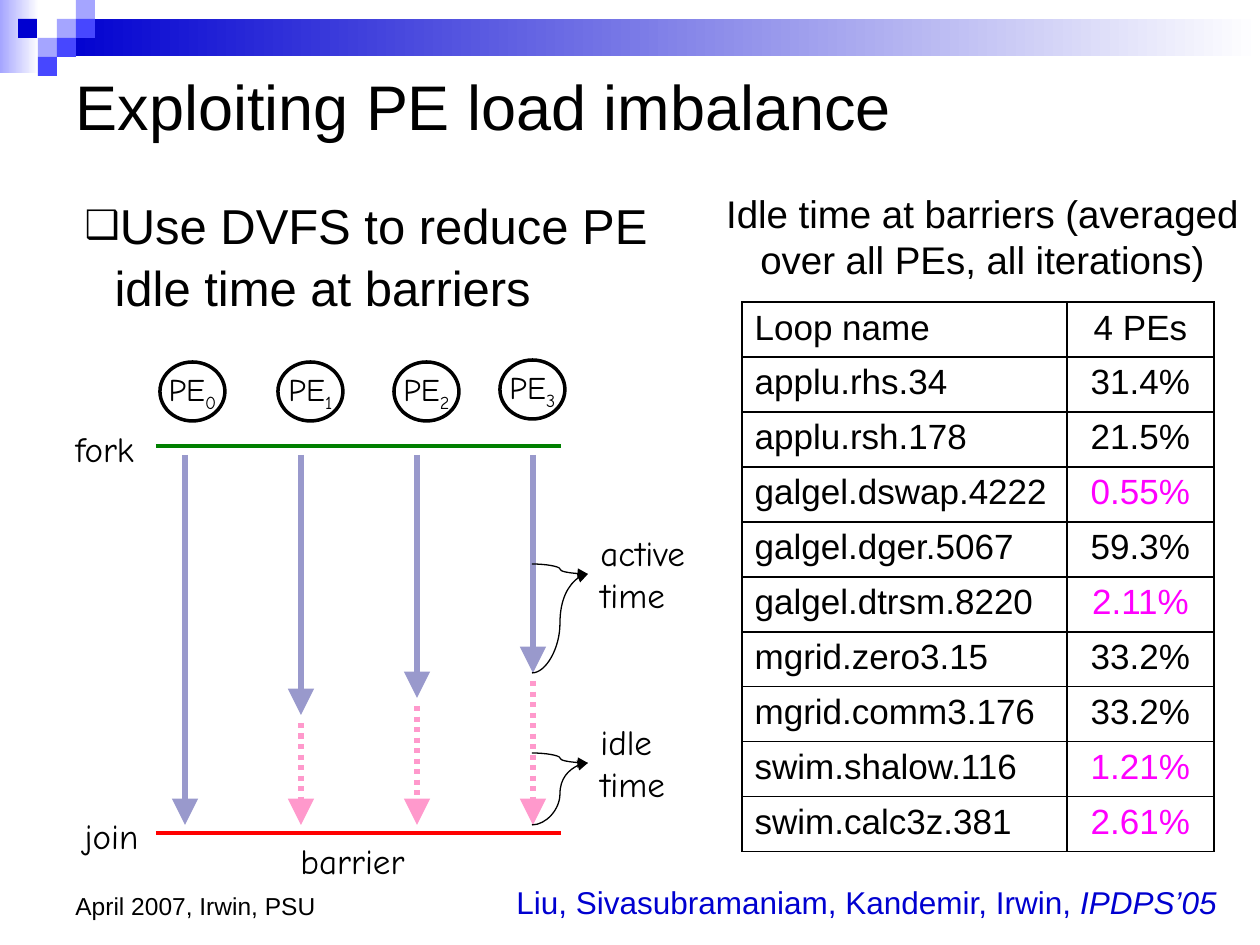
from lxml.etree import SubElement
from pptx import Presentation
from pptx.dml.color import RGBColor
from pptx.enum.dml import MSO_LINE as DASH
from pptx.enum.shapes import MSO_CONNECTOR as LINK, MSO_SHAPE as SHAPE
from pptx.enum.text import MSO_ANCHOR as ANCHOR, MSO_AUTO_SIZE as AUTOSIZE, PP_ALIGN as ALIGN
from pptx.oxml.ns import qn
from pptx.util import Emu, Pt

PX_PER_INCH = 126
BLACK, BLUE, MID_BLUE, PALE_BLUE = "000000", "0000D0", "4747FF", "A5A5FF"
GREEN, RED, MAGENTA, WHITE = "008000", "FF0000", "FF00FF", "FFFFFF"
ACTIVE, IDLE = "9999CC", "FF99CC"
SANS, HAND = "Arial", "Comic Neue"

LOOPS = [
    ("Loop name", "4 PEs"),
    ("applu.rhs.34", "31.4%"),
    ("applu.rsh.178", "21.5%"),
    ("galgel.dswap.4222", "0.55%"),
    ("galgel.dger.5067", "59.3%"),
    ("galgel.dtrsm.8220", "2.11%"),
    ("mgrid.zero3.15", "33.2%"),
    ("mgrid.comm3.176", "33.2%"),
    ("swim.shalow.116", "1.21%"),
    ("swim.calc3z.381", "2.61%"),
]
BALANCED = {"0.55%", "2.11%", "1.21%", "2.61%"}


def px(length):
    return Emu(round(length * 914400 / PX_PER_INCH))


def rgb(color):
    return RGBColor.from_string(color)


def write(frame, text, size=20, font=SANS, color=BLACK, align=ALIGN.LEFT,
          anchor=None, wrap=True, ending="", subscript=False):
    """Fill a frame, one paragraph a line; the ending is italic or subscript."""
    frame.word_wrap = wrap
    if anchor is not None:
        frame.vertical_anchor = anchor
    for index, line in enumerate(text.split("\n")):
        paragraph = frame.add_paragraph() if index else frame.paragraphs[0]
        paragraph.alignment = align
        for part in filter(None, (line, ending)):
            run = paragraph.add_run()
            run.text = part
            run.font.size, run.font.name = Pt(size), font
            run.font.color.rgb = rgb(color)
            if part == ending and subscript:
                run.font._element.set("baseline", "-25000")
            elif part == ending:
                run.font.italic = True


class Board:
    def __init__(self, slide):
        self.slide = slide
        self.shapes = slide.shapes

    def placeholder(self, index, box, text, **style):
        holder = self.slide.placeholders[index]
        holder.left, holder.top, holder.width, holder.height = map(px, box)
        frame = holder.text_frame
        frame.auto_size = AUTOSIZE.NONE
        write(frame, text, **style)
        return frame

    def label(self, box, text, **style):
        write(self.shapes.add_textbox(*map(px, box)).text_frame, text, **style)

    def block(self, box, color, fade=False):
        """Draw a borderless rectangle, fading to white on the right if asked."""
        block = self.shapes.add_shape(SHAPE.RECTANGLE, *map(px, box))
        block.shadow.inherit = False
        block.line.fill.background()
        if fade:
            block.fill.gradient()
            block.fill.gradient_angle = 0
            for stop, shade in zip(block.fill.gradient_stops, (color, WHITE)):
                stop.color.rgb = rgb(shade)
        else:
            block.fill.solid()
            block.fill.fore_color.rgb = rgb(color)

    def processor(self, box, number):
        circle = self.shapes.add_shape(SHAPE.OVAL, *map(px, box))
        circle.shadow.inherit = False
        circle.fill.background()
        circle.line.color.rgb = rgb(BLACK)
        circle.line.width = Pt(2)
        write(circle.text_frame, "PE", size=18, font=HAND, align=ALIGN.CENTER,
              anchor=ANCHOR.MIDDLE, wrap=False, ending=str(number), subscript=True)

    def link(self, start, end, color, width, kind=LINK.STRAIGHT, dash=None, head=None):
        """Draw a line; head is the arrowhead size at its end."""
        link = self.shapes.add_connector(kind, *map(px, (*start, *end)))
        link.line.color.rgb = rgb(color)
        link.line.width = Pt(width)
        if dash:
            link.line.dash_style = dash
        if head:
            SubElement(link.line._get_or_add_ln(), qn("a:tailEnd"),
                       type="triangle", w=head, len=head)
        SubElement(link._element.spPr, qn("a:effectLst"))

    def table(self, left, top, widths, row_height, rows):
        frame = self.shapes.add_table(len(rows), len(widths), px(left), px(top),
                                      px(sum(widths)), px(row_height * len(rows)))
        table = frame.table
        table.first_row = table.horz_banding = False
        for column, width in zip(table.columns, widths):
            column.width = px(width)
        for row, values in zip(table.rows, rows):
            row.height = px(row_height)
            for cell, value, align in zip(row.cells, values, (ALIGN.LEFT, ALIGN.CENTER)):
                self.outline(cell)
                cell.fill.background()
                write(cell.text_frame, value, align=align,
                      color=MAGENTA if value in BALANCED else BLACK)

    def outline(self, cell):
        properties = cell._tc.get_or_add_tcPr()
        for side in ("lnL", "lnR", "lnT", "lnB"):
            border = SubElement(properties, qn(f"a:{side}"), w=str(Pt(1)))
            fill = SubElement(border, qn("a:solidFill"))
            SubElement(fill, qn("a:srgbClr"), val=BLACK)


def draw_banner(board):
    board.block((0, 0, 39, 73), PALE_BLUE, fade=True)
    board.block((57, 19, 1203, 37), BLUE, fade=True)
    for left, top, color in [(57, 19, PALE_BLUE), (76, 0, PALE_BLUE), (76, 19, MID_BLUE),
                             (38, 38, PALE_BLUE), (18, 19, BLUE), (57, 38, MID_BLUE),
                             (38, 57, MID_BLUE)]:
        board.block((left, top, 19, 19), color)


def draw_timeline(board):
    fork, join, barrier = 446, 833, 825
    first_lane, lane_step = 185, 116
    hand = dict(font=HAND, wrap=False)

    for y, color in ((fork, GREEN), (join, RED)):
        board.link((156, y), (561, y), color, 2)
    board.label((63, 421, 97, 55), "fork", **hand)
    board.label((72, 808, 86, 55), "join", **hand)
    board.label((288, 833, 142, 55), "barrier", **hand)

    circles = [(160, 362), (278, 362), (394, 362), (500, 360)]
    active_ends = [barrier, 715, 698, 673]
    for number, ((left, top), active_end) in enumerate(zip(circles, active_ends)):
        board.processor((left, top, 65, 59), number)
        lane = first_lane + number * lane_step
        board.link((lane, 455), (lane, active_end), ACTIVE, 3, head="lg")
        if active_end < barrier:
            board.link((lane, active_end + 8), (lane, barrier), IDLE, 3,
                       dash=DASH.ROUND_DOT, head="lg")

    for phase, middle, end, target in (("active", 564, 673, 574), ("idle", 753, barrier, 763)):
        board.label((588, target - 49, 123, 97) if phase == "active"
                    else (588, target - 49, 98, 97), f"{phase}\ntime", **hand)
        for start in (middle, end):
            board.link((532, start), (588, target), BLACK, 0.75, kind=LINK.CURVE, head="med")


def main():
    deck = Presentation()
    deck.slide_width, deck.slide_height = px(1260), px(945)
    board = Board(deck.slides.add_slide(deck.slide_layouts[1]))

    draw_banner(board)
    board.placeholder(0, (63, 63, 1134, 84), "Exploiting PE load imbalance",
                      size=36, anchor=ANCHOR.MIDDLE)
    goal = board.placeholder(1, (72, 186, 614, 127),
                             "Use DVFS to reduce PE idle time at barriers", size=28)
    point = goal.paragraphs[0]
    point.space_before, point.line_spacing = Pt(0), 1.05
    bullet = point._p.get_or_add_pPr()
    bullet.set("marL", str(px(30)))
    bullet.set("indent", str(-px(30)))
    SubElement(bullet, qn("a:buSzPct"), val="80000")
    SubElement(bullet, qn("a:buChar"), char="❑")

    draw_timeline(board)
    board.label((713, 184, 539, 106),
                "Idle time at barriers (averaged\nover all PEs, all iterations)",
                size=22, align=ALIGN.CENTER, wrap=False)
    board.table(742, 302, (325, 147), 55, LOOPS)
    board.label((63, 861, 294, 66), "April 2007, Irwin, PSU", size=14, anchor=ANCHOR.BOTTOM)
    board.label((504, 877, 746, 53), "Liu, Sivasubramaniam, Kandemir, Irwin, ",
                size=18, color=BLUE, ending="IPDPS’05")
    deck.save("out.pptx")


if __name__ == "__main__":
    main()
